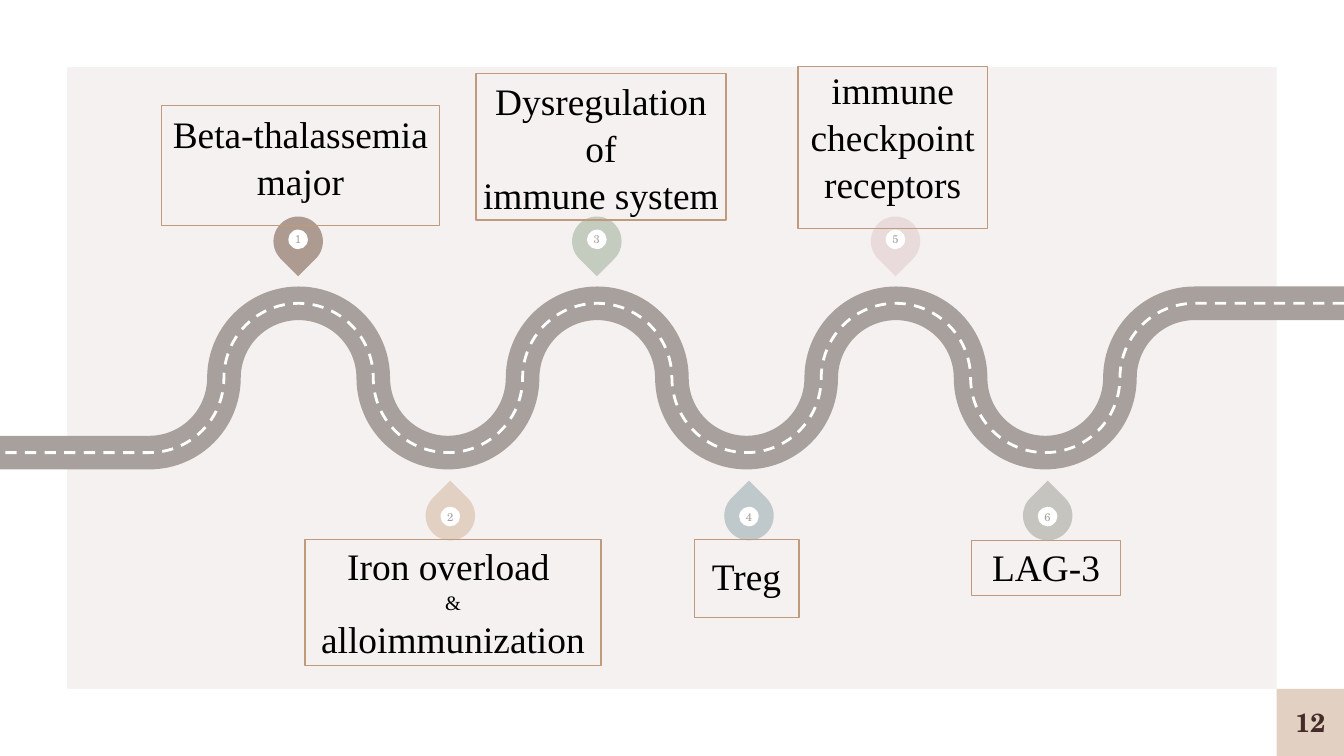
from itertools import cycle
from typing import NamedTuple

from lxml import etree
from pptx import Presentation
from pptx.dml.color import RGBColor
from pptx.enum.dml import MSO_LINE
from pptx.enum.shapes import MSO_SHAPE
from pptx.enum.text import MSO_ANCHOR, PP_ALIGN
from pptx.oxml.ns import qn
from pptx.util import Pt

RECT = MSO_SHAPE.RECTANGLE
OVAL = MSO_SHAPE.OVAL
FRAME = MSO_SHAPE.FRAME
DROP = MSO_SHAPE.TEAR
DASH = MSO_LINE.DASH
TOP, MIDDLE, BOTTOM = MSO_ANCHOR.TOP, MSO_ANCHOR.MIDDLE, MSO_ANCHOR.BOTTOM
CENTER = PP_ALIGN.CENTER

SCALE = 6350
WIDTH, HEIGHT, EDGE = 1440, 810, 72
BEND, CREST = 80, 325
TURNS = ((270, -90), (0, 90), (90, 90), (0, -90))
SCHOOL, TIMES = "TeX Gyre Schola", "Times New Roman"
WHITE, GREY, SAND = "FFFFFF", "A8A09D", "E2D1C2"


class Box(NamedTuple):
    left: int
    top: int
    width: int
    height: int


class Pin(NamedTuple):
    mark: str
    left: int
    fill: str
    low: bool


class Label(NamedTuple):
    box: Box
    lines: tuple
    anchor: MSO_ANCHOR
    inset: int


PINS = [
    Pin(str(i + 1), 293 + 320 * (i // 2) + 163 * (i % 2), fill, i % 2 == 1)
    for i, fill in enumerate(
        ("AD9B91", SAND, "C4CBBF", "BFC8CB", "E9DBDB", "C5C4BF")
    )
]

LABELS = [
    Label(Box(173, 113, 298, 129), ("Beta-thalassemia major",), BOTTOM, 24),
    Label(Box(855, 71, 203, 174), ("immune checkpoint receptors",), BOTTOM, 24),
    Label(Box(744, 578, 112, 84), ("Treg",), BOTTOM, 21),
    Label(Box(327, 578, 317, 135), ("Iron overload ", "&", "alloimmunization"), TOP, 2),
    Label(Box(510, 79, 268, 157), ("Dysregulation", "of", "immune system"), TOP, 2),
    Label(Box(1041, 579, 160, 59), ("LAG-3",), TOP, 2),
]


def px(count: int) -> int:
    return count * SCALE


def paint(target, tint: str) -> None:
    target.solid()
    target.fore_color.rgb = RGBColor.from_string(tint)


def draw(shapes, kind, box: Box, fill: str = ""):
    shape = shapes.add_shape(kind, *map(px, box))
    shape.shadow.inherit = False
    shape.line.fill.background()
    if fill:
        paint(shape.fill, fill)
    else:
        shape.fill.background()
    return shape


def write(shape, lines: tuple, font: str, size: int, tint: str, anchor=MIDDLE,
          bold: bool = False, pitch: float = 1.0) -> None:
    frame = shape.text_frame
    frame.word_wrap = True
    frame.vertical_anchor = anchor
    frame.margin_left = frame.margin_right = 0
    frame.margin_top = frame.margin_bottom = 0
    frame.text = "\n".join(lines)
    for line in frame.paragraphs:
        line.alignment = CENTER
        line.line_spacing = pitch
        line.font.name = font
        line.font.size = Pt(11 if line.text == "&" else size)
        line.font.bold = bold
        line.font.color.rgb = RGBColor.from_string(tint)


def add_road(shapes, tint: str, weight: float):
    steps = (CREST, CREST + BEND, CREST + 2 * BEND, CREST + BEND)
    points = [
        (x, y) for x, y in zip(range(WIDTH - 2 * BEND, BEND, -BEND), cycle(steps))
    ]
    pen = shapes.build_freeform(WIDTH, CREST, scale=SCALE)
    pen.add_line_segments(points + [(0, CREST + 2 * BEND)], close=False)
    road = pen.convert_to_shape()
    road.shadow.inherit = False
    road.fill.background()
    paint(road.line.fill, tint)
    road.line.width = Pt(weight)
    curves = list(road._element.iter(qn("a:lnTo")))[1:-1]
    for curve, (start, sweep) in zip(curves, cycle(TURNS)):
        arc = etree.Element(qn("a:arcTo"), wR=str(BEND), hR=str(BEND),
                            stAng=str(start * 60000), swAng=str(sweep * 60000))
        curve.getparent().replace(curve, arc)
    return road


def add_pin(shapes, pin: Pin) -> None:
    group = shapes.add_group_shape().shapes
    top = 526 if pin.low else 232
    drop = draw(group, DROP, Box(pin.left, top, 53, 53), pin.fill)
    drop.rotation = 315 if pin.low else 135
    hole = Box(pin.left + 16, top + (17 if pin.low else 14), 21, 21)
    write(draw(group, OVAL, hole, WHITE), (pin.mark,), SCHOOL, 6, GREY)


def add_label(shapes, label: Label) -> None:
    shape = draw(shapes, RECT, label.box)
    paint(shape.line.fill, "C09B7B")
    shape.line.width = Pt(0.75)
    write(shape, label.lines, TIMES, 20, "000000", label.anchor, pitch=1.05)
    if label.anchor == BOTTOM:
        shape.text_frame.margin_bottom = px(label.inset)
    else:
        shape.text_frame.margin_top = px(label.inset)


def main() -> None:
    deck = Presentation()
    deck.slide_width, deck.slide_height = px(WIDTH), px(HEIGHT)
    slide = deck.slides.add_slide(deck.slide_layouts[6])
    paint(slide.background.fill, "F5F1F0")
    shapes = slide.shapes

    border = draw(shapes, FRAME, Box(0, 0, WIDTH, HEIGHT), WHITE)
    border.adjustments[0] = EDGE / HEIGHT
    corner = Box(WIDTH - EDGE, HEIGHT - EDGE, EDGE, EDGE)
    write(draw(shapes, RECT, corner, SAND), ("12",), SCHOOL, 14, "462B2B", bold=True)

    add_road(shapes, GREY, 18)
    add_road(shapes, WHITE, 1.5).line.dash_style = DASH
    for pin in PINS:
        add_pin(shapes, pin)
    for label in LABELS:
        add_label(shapes, label)
    deck.save("out.pptx")


if __name__ == "__main__":
    main()
